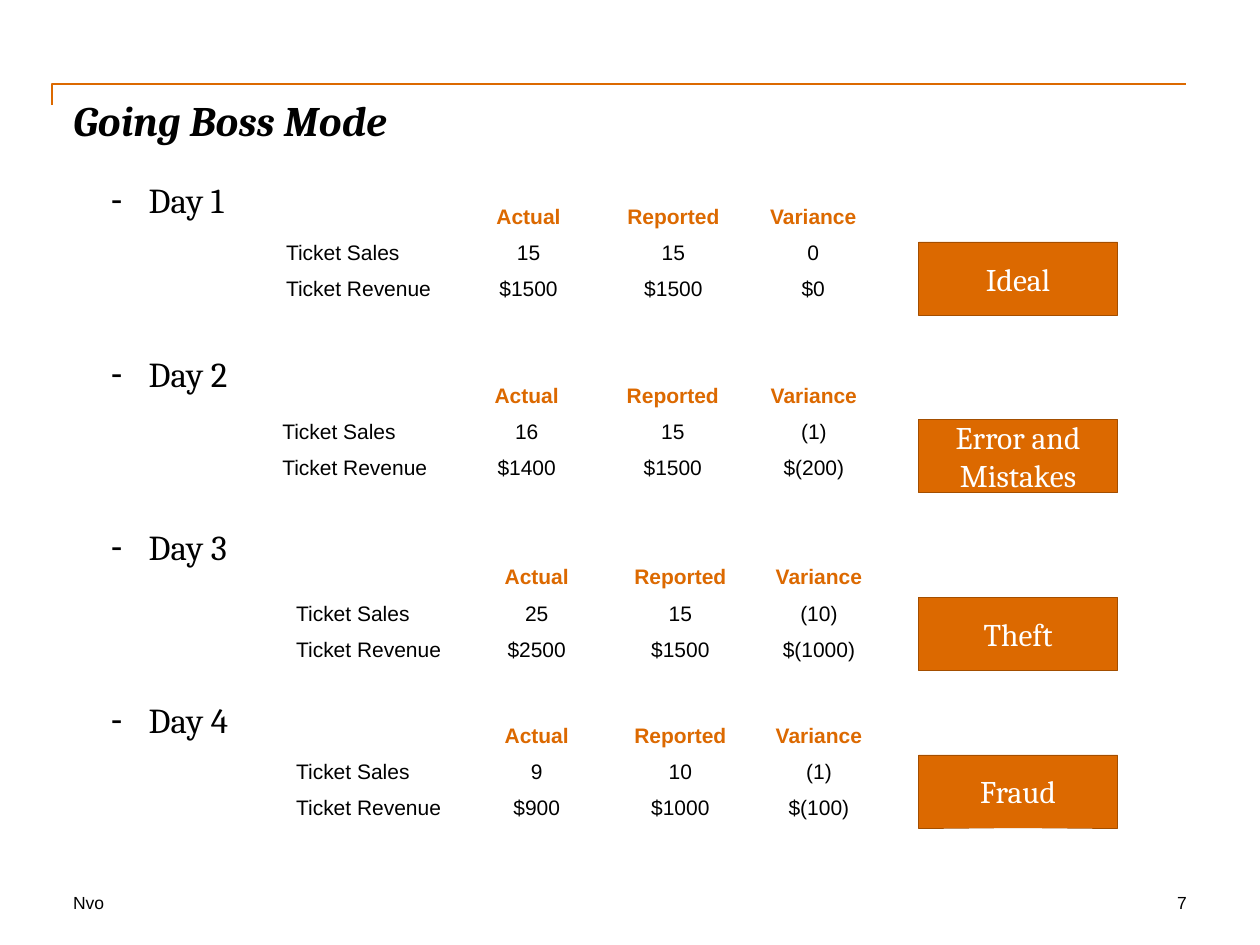
from lxml.etree import SubElement
from pptx import Presentation
from pptx.dml.color import RGBColor
from pptx.enum.shapes import MSO_CONNECTOR, MSO_SHAPE
from pptx.enum.text import MSO_ANCHOR, MSO_AUTO_SIZE, PP_ALIGN
from pptx.oxml.ns import qn
from pptx.util import Inches, Pt

ORANGE = RGBColor(0xDC, 0x69, 0x00)
DARK_ORANGE = RGBColor(0xA3, 0x4E, 0x00)
BLACK = RGBColor(0, 0, 0)
WHITE = RGBColor(0xFF, 0xFF, 0xFF)

HEADER = ["", "Actual", "Reported", "Variance", "", ""]
WIDE = [1.42, 1.18, 1.1, 1.1, 1.12, 1.08]
DAYS = [
    ("Ideal", 2.17, 1.58, 1.92, [1.43, 1.19, 1.11, 1.11, 1.2, 1.02],
     ["15", "15", "0"], ["$1500", "$1500", "$0"]),
    ("Error and Mistakes", 2.14, 3, 3.33, [1.44, 1.2, 1.12, 1.12, 1.15, 1.08],
     ["16", "15", "(1)"], ["$1400", "$1500", "$(200)"]),
    ("Theft", 2.25, 4.44, 4.74, WIDE,
     ["25", "15", "(10)"], ["$2500", "$1500", "$(1000)"]),
    ("Fraud", 2.25, 5.7, 5.99, WIDE,
     ["9", "10", "(1)"], ["$900", "$1000", "$(100)"]),
]


def style(paragraph, font, size, color, align=PP_ALIGN.LEFT, bold=False):
    paragraph.alignment = align
    paragraph.font.name = font
    paragraph.font.size = Pt(size)
    paragraph.font.color.rgb = color
    paragraph.font.bold = bold


def set_frame(frame):
    frame.margin_left = frame.margin_right = 0
    frame.margin_top = frame.margin_bottom = 0
    frame.word_wrap = True
    frame.auto_size = MSO_AUTO_SIZE.NONE
    frame.vertical_anchor = MSO_ANCHOR.TOP


prs = Presentation()
prs.slide_width, prs.slide_height = Inches(10), Inches(7.5)
slide = prs.slides.add_slide(prs.slide_layouts[1])
shapes = slide.shapes

corner_rule = shapes.add_connector(
    MSO_CONNECTOR.ELBOW, Inches(5), Inches(5.25), Inches(4.83), Inches(-3.75))
corner_rule.line.color.rgb = ORANGE
corner_rule.line.width = Pt(1)
rule_properties = corner_rule._element.spPr
rule_properties.find(qn("a:xfrm")).set("rot", "5400000")
rule_properties.find(qn("a:prstGeom")).set("prst", "bentConnector2")
SubElement(rule_properties, qn("a:effectLst"))

title = shapes.title
title.left, title.top = Inches(0.58), Inches(0.75)
title.width, title.height = Inches(8.83), Inches(1)
set_frame(title.text_frame)
title.text_frame.text = "Going Boss Mode"
heading = title.text_frame.paragraphs[0]
style(heading, "Cambria", 24, BLACK, bold=True)
heading.font.italic = True

day_list = slide.placeholders[1]
day_list.left, day_list.top = Inches(0.58), Inches(1.42)
day_list.width, day_list.height = Inches(8.83), Inches(5.33)
set_frame(day_list.text_frame)
day_list.text_frame.text = "\n".join(f"Day {n}" for n in range(1, len(DAYS) + 1))
for index, day in enumerate(day_list.text_frame.paragraphs):
    style(day, "Cambria", 20, BLACK)
    day.level = 1
    day.space_before = Pt(66 if index else 0)
    day.space_after = Pt(9)
    properties = day._p.get_or_add_pPr()
    properties.set("marL", str(Inches(0.6)))
    properties.set("indent", str(Inches(-0.3)))
    bullet_color = SubElement(properties, qn("a:buClr"))
    SubElement(bullet_color, qn("a:srgbClr"), val=str(BLACK))
    SubElement(properties, qn("a:buChar"), char="-")

for text, left, width, align in [("Nvo", 0.58, 2.83, PP_ALIGN.LEFT),
                                 ("7", 7.75, 1.67, PP_ALIGN.RIGHT)]:
    footer = shapes.add_textbox(Inches(left), Inches(7.08), Inches(width), Inches(0.17))
    set_frame(footer.text_frame)
    footer.text_frame.text = text
    style(footer.text_frame.paragraphs[0], "Arial", 10, BLACK, align)

for verdict, left, top, verdict_top, widths, sales, revenue in DAYS:
    rows = [HEADER, ["Ticket Sales", *sales, "", ""], ["Ticket Revenue", *revenue, "", ""]]
    table = shapes.add_table(
        3, 6, Inches(left), Inches(top), Inches(sum(widths)), Inches(0.84)).table
    table.first_row = table.horz_banding = False
    for column, width in zip(table.columns, widths):
        column.width = Inches(width)
    for row, height in zip(table.rows, [0.25, 0.25, 0.34]):
        row.height = Inches(height)
    for r, row in enumerate(rows):
        for c, text in enumerate(row):
            cell = table.cell(r, c)
            cell.fill.background()
            cell.text = text
            style(cell.text_frame.paragraphs[0], "Arial", 12, BLACK if r else ORANGE,
                  PP_ALIGN.CENTER if c else PP_ALIGN.LEFT, bold=r == 0)
    for c in (4, 5):
        table.cell(1, c).merge(table.cell(2, c))

    verdict_box = shapes.add_shape(
        MSO_SHAPE.RECTANGLE, Inches(7.29), Inches(verdict_top), Inches(1.58), Inches(0.58))
    verdict_box.shadow.inherit = False
    verdict_box.fill.solid()
    verdict_box.fill.fore_color.rgb = ORANGE
    verdict_box.line.color.rgb = DARK_ORANGE
    verdict_box.line.width = Pt(0.25)
    verdict_box.text_frame.text = verdict
    verdict_box.text_frame.vertical_anchor = MSO_ANCHOR.MIDDLE
    style(verdict_box.text_frame.paragraphs[0], "Cambria", 18, WHITE, PP_ALIGN.CENTER)

prs.save("out.pptx")
